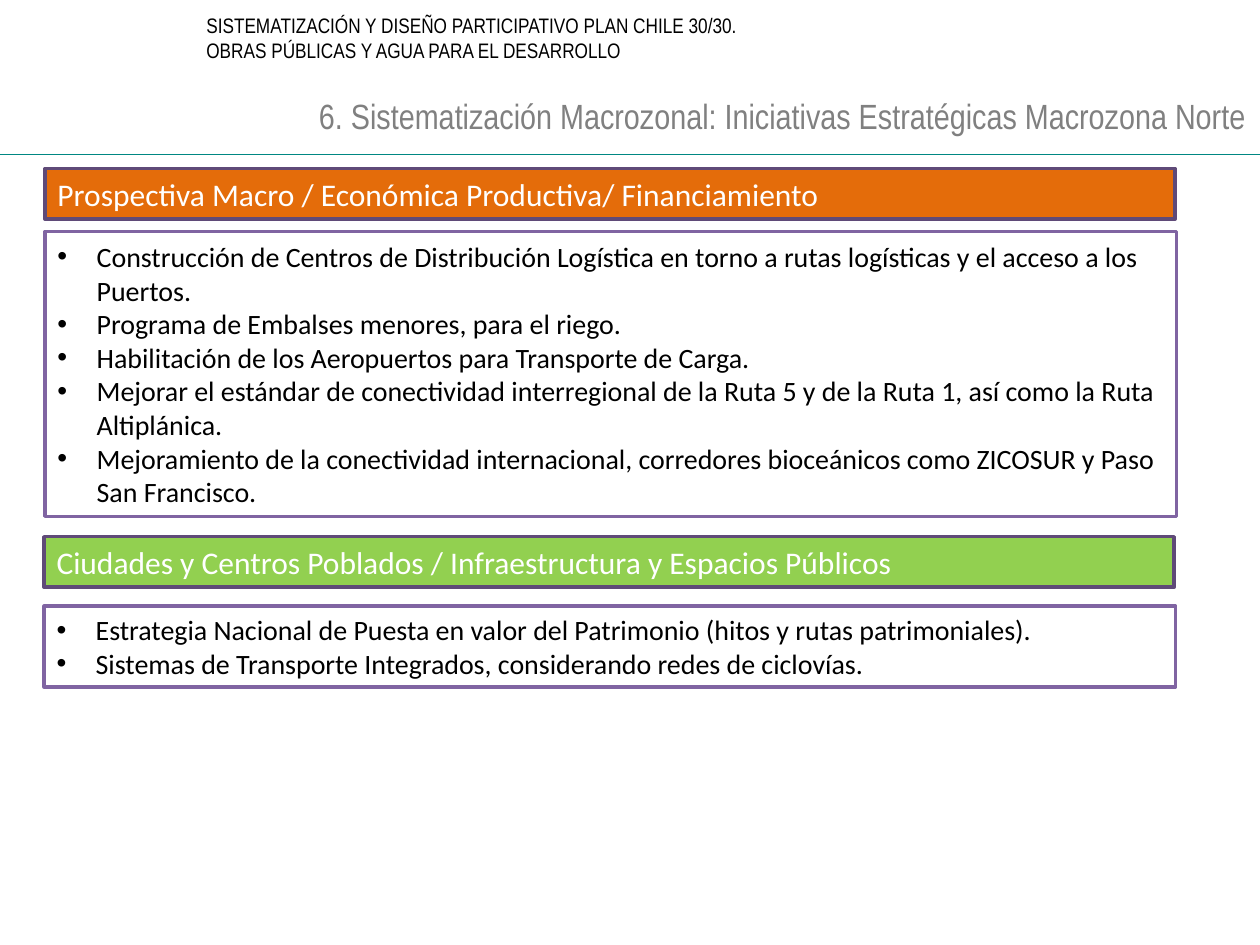
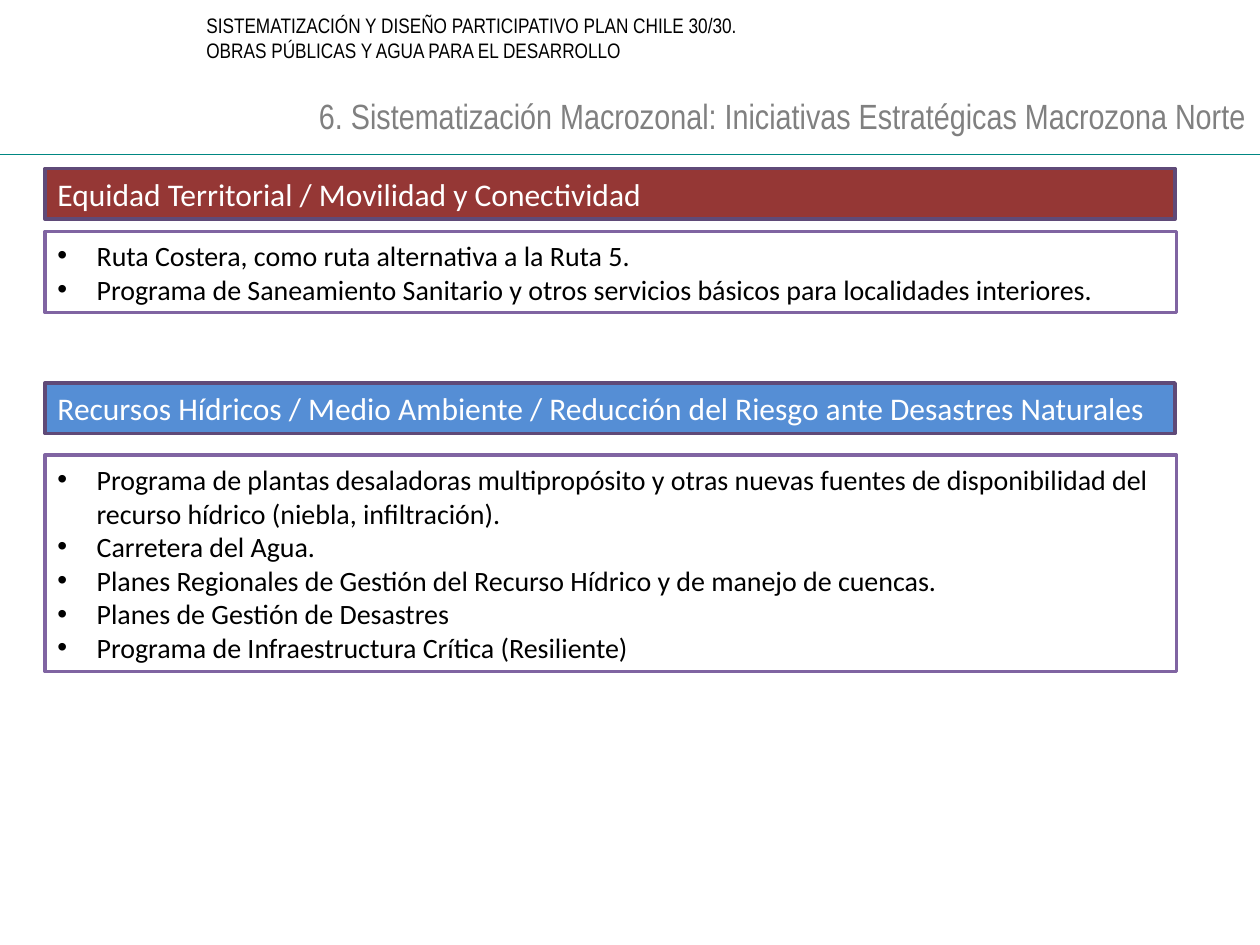
from lxml import etree
from pptx import Presentation
from pptx.dml.color import RGBColor
from pptx.enum.shapes import MSO_CONNECTOR, MSO_SHAPE
from pptx.enum.text import MSO_ANCHOR, MSO_AUTO_SIZE, PP_ALIGN
from pptx.oxml.ns import qn
from pptx.util import Cm, Pt

RECT = MSO_SHAPE.RECTANGLE
STRAIGHT = MSO_CONNECTOR.STRAIGHT
TOP = MSO_ANCHOR.TOP
MIDDLE = MSO_ANCHOR.MIDDLE
GROW = MSO_AUTO_SIZE.SHAPE_TO_FIT_TEXT
LEFT = PP_ALIGN.LEFT
RIGHT = PP_ALIGN.RIGHT

BLACK = RGBColor(0x00, 0x00, 0x00)
WHITE = RGBColor(0xFF, 0xFF, 0xFF)
GRAY = RGBColor(0x80, 0x80, 0x80)
TEAL = RGBColor(0x00, 0x87, 0x82)
PURPLE = RGBColor(0x80, 0x64, 0xA2)
DARK_PURPLE = RGBColor(0x5F, 0x4A, 0x78)
ORANGE = RGBColor(0xE4, 0x6C, 0x0A)
GREEN = RGBColor(0x92, 0xD0, 0x50)
RED = RGBColor(0x95, 0x37, 0x35)
BLUE = RGBColor(0x55, 0x8E, 0xD5)

HEAD_FONT = "Arial Narrow"
BODY_FONT = "Calibri"
PLAN = ("SISTEMATIZACIÓN Y DISEÑO PARTICIPATIVO PLAN CHILE 30/30. "
        "OBRAS PÚBLICAS Y AGUA PARA EL DESARROLLO")
TITLE = "6. Sistematización Macrozonal: Iniciativas Estratégicas Macrozona Norte"

SECTION_LEFT = 0.91
BAND_WIDTH, BAND_HEIGHT = 22.78, 1.02
LIST_WIDTH = 22.81
BULLET_INDENT = Cm(0.79)

SLIDES = [
    [
        (SECTION_LEFT, 3.4, ORANGE,
         "Prospectiva Macro / Económica Productiva/ Financiamiento",
         4.67, 5.74,
         ["Construcción de Centros de Distribución Logística en torno a rutas "
          "logísticas y el acceso a los Puertos.",
          "Programa de Embalses menores, para el riego.",
          "Habilitación de los Aeropuertos para Transporte de Carga.",
          "Mejorar el estándar de conectividad interregional de la Ruta 5 y de "
          "la Ruta 1, así como la Ruta Altiplánica.",
          "Mejoramiento de la conectividad internacional, corredores "
          "bioceánicos como ZICOSUR y Paso San Francisco."]),
        (0.89, 10.82, GREEN,
         "Ciudades y Centros Poblados / Infraestructura y Espacios Públicos",
         12.22, 1.63,
         ["Estrategia Nacional de Puesta en valor del Patrimonio (hitos y "
          "rutas patrimoniales).",
          "Sistemas de Transporte Integrados, considerando redes de ciclovías."]),
    ],
    [
        (SECTION_LEFT, 3.4, RED,
         "Equidad Territorial / Movilidad y Conectividad",
         4.67, 1.63,
         ["Ruta Costera, como ruta alternativa a la Ruta 5.",
          "Programa de Saneamiento Sanitario y otros servicios básicos para "
          "localidades interiores."]),
        (SECTION_LEFT, 7.72, BLUE,
         "Recursos Hídricos / Medio Ambiente / Reducción del Riesgo ante "
         "Desastres Naturales",
         9.17, 4.37,
         ["Programa de plantas desaladoras multipropósito y otras nuevas "
          "fuentes de disponibilidad del recurso hídrico (niebla, infiltración).",
          "Carretera del Agua.",
          "Planes Regionales de Gestión del Recurso Hídrico y de manejo de cuencas.",
          "Planes de Gestión de Desastres",
          "Programa de Infraestructura Crítica (Resiliente)"]),
    ],
]


def add_run(p, text, font, size, color):
    r = p.add_run()
    r.text = text
    r.font.name = font
    r.font.size = Pt(size)
    r.font.color.rgb = color


def add_bullet(p):
    pPr = p._p.get_or_add_pPr()
    pPr.set("marL", str(BULLET_INDENT))
    pPr.set("indent", str(-BULLET_INDENT))
    etree.SubElement(pPr, qn("a:buFont")).set("typeface", "Arial")
    etree.SubElement(pPr, qn("a:buChar")).set("char", "•")


def add_text(s, box, text, size, color, align=LEFT):
    tf = s.shapes.add_textbox(*map(Cm, box)).text_frame
    tf.word_wrap = True
    tf.vertical_anchor = TOP
    p = tf.paragraphs[0]
    p.alignment = align
    add_run(p, text, HEAD_FONT, size, color)
    return tf


def add_rule(s):
    line = s.shapes.add_connector(STRAIGHT, Cm(-0.03), Cm(3.12), Cm(25.4), Cm(3.12))
    line.line.color.rgb = TEAL
    line.line.width = Pt(0.75)
    etree.SubElement(line._element.spPr, qn("a:effectLst"))


def add_box(s, box, fill, border):
    sp = s.shapes.add_shape(RECT, *map(Cm, box))
    sp.shadow.inherit = False
    sp.fill.solid()
    sp.fill.fore_color.rgb = fill
    sp.line.color.rgb = border
    sp.line.width = Pt(2)
    tf = sp.text_frame
    tf.word_wrap = True
    tf.auto_size = GROW
    tf.vertical_anchor = MIDDLE
    return tf


def add_band(s, left, top, fill, text):
    tf = add_box(s, (left, top, BAND_WIDTH, BAND_HEIGHT), fill, DARK_PURPLE)
    p = tf.paragraphs[0]
    p.alignment = LEFT
    add_run(p, text, BODY_FONT, 18, WHITE)


def add_list(s, left, top, height, items):
    tf = add_box(s, (left, top, LIST_WIDTH, height), WHITE, PURPLE)
    for i, item in enumerate(items):
        p = tf.add_paragraph() if i else tf.paragraphs[0]
        add_bullet(p)
        p.alignment = LEFT
        add_run(p, item, BODY_FONT, 16, BLACK)


def add_header(s):
    add_rule(s)
    add_text(s, (3.91, 0.13, 12.19, 1.27), PLAN, 12, BLACK).auto_size = GROW
    add_text(s, (3.07, 1.78, 22.3, 1.6), TITLE, 20, GRAY, RIGHT)


def main():
    prs = Presentation()
    prs.slide_width, prs.slide_height = Cm(25.4), Cm(19.05)
    for sections in SLIDES:
        s = prs.slides.add_slide(prs.slide_layouts[6])
        add_header(s)
        for left, band_top, fill, heading, list_top, list_height, items in sections:
            add_band(s, left, band_top, fill, heading)
            add_list(s, left, list_top, list_height, items)
    prs.save("out.pptx")


if __name__ == "__main__":
    main()
